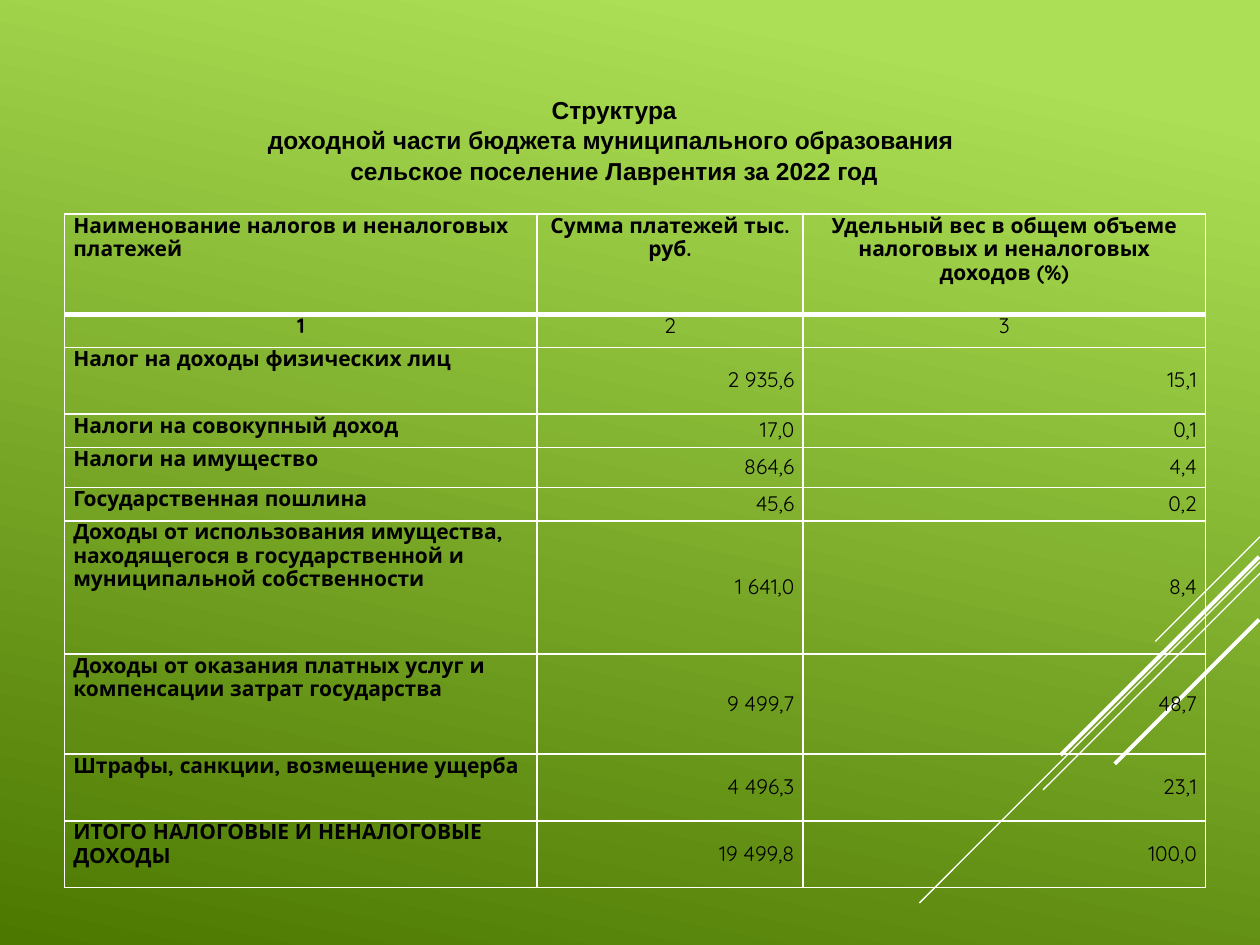
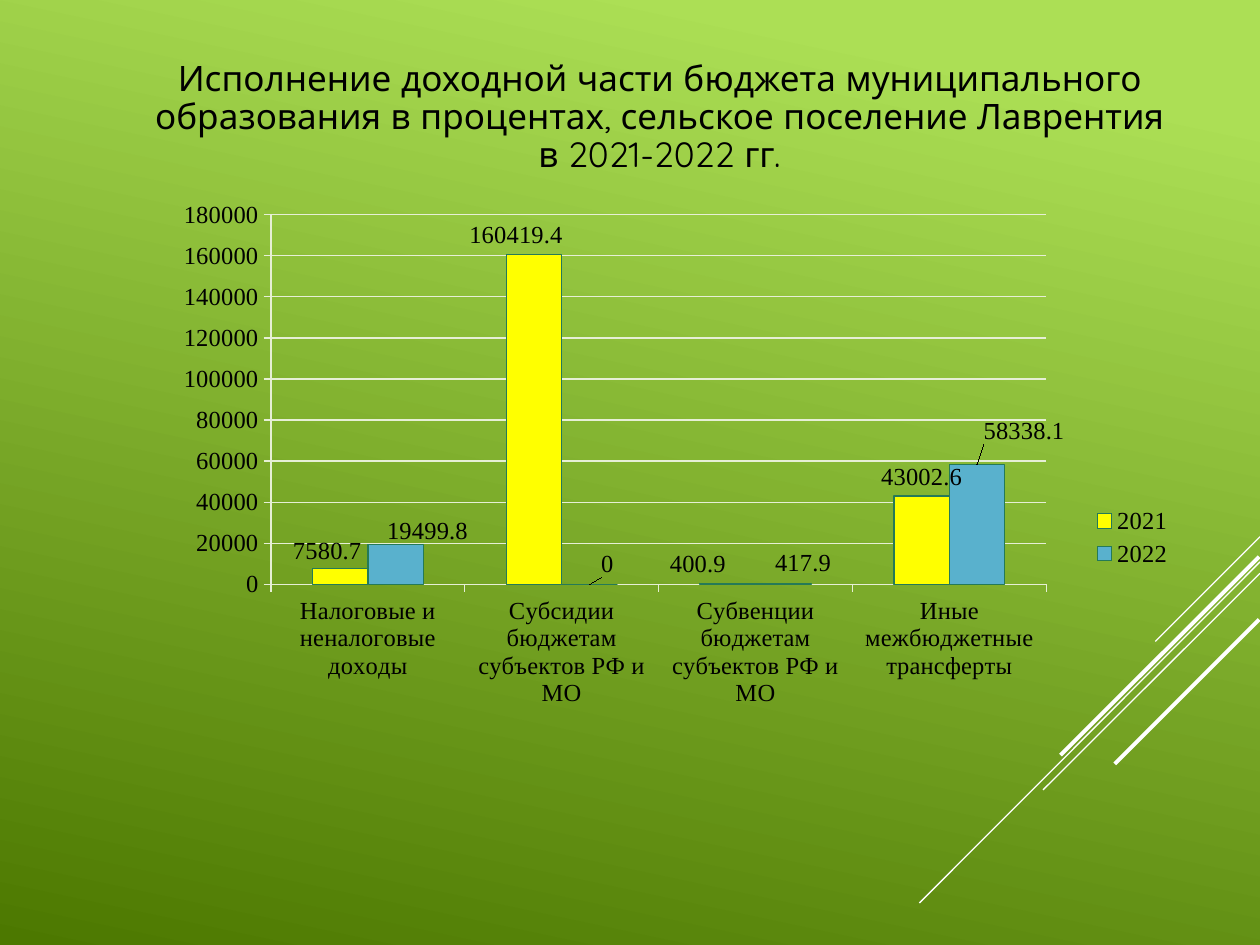
"""Builds two slides on the revenue side of a settlement budget."""
import pptx
import pptx.chart.data
import pptx.dml.color
import pptx.enum.chart
import pptx.enum.shapes
import pptx.enum.text
import pptx.oxml.ns
import pptx.util
from lxml import etree

Pt = pptx.util.Pt
qn = pptx.oxml.ns.qn
RGBColor = pptx.dml.color.RGBColor
ALIGN = pptx.enum.text.PP_ALIGN

BLACK = RGBColor(0x00, 0x00, 0x00)
WHITE = RGBColor(0xFF, 0xFF, 0xFF)
LIME = RGBColor(0xAC, 0xDF, 0x55)
MOSS = RGBColor(0x4C, 0x78, 0x00)
GRID = RGBColor(0xE6, 0xEF, 0xD5)
YELLOW = RGBColor(0xFF, 0xFF, 0x00)
BLUE = RGBColor(0x59, 0xB1, 0xCD)
BAR_EDGE = RGBColor(0x25, 0x7A, 0x57)

BODY_FONT = "Quicksand"
CHART_FONT = "Times New Roman"

STRIPES = [
    (720, 306.7, 660.2, 366.5, 0.75),
    (720, 321.1, 525.4, 516, 0.75),
    (720, 327.6, 596, 451.4, 0.75),
    (719.5, 318.2, 606, 431.5, 2.25),
    (719.5, 354, 637, 436.5, 2.25),
]

STRUCTURE_TITLE = [
    "Структура",
    "доходной части бюджета муниципального образования ",
    "сельское поселение Лаврентия за 2022 год",
]
TABLE_LEFT, TABLE_TOP = 36.9, 122.4
COLUMN_WIDTHS = [270, 152, 230]
ROW_UNIT = 19.05
HEADERS = [
    "Наименование налогов и неналоговых платежей",
    "Сумма платежей тыс. руб.",
    "Удельный вес в общем объеме налоговых и неналоговых доходов (%)",
]
COLUMN_NUMBERS = ["1", "2", "3"]
INCOME = [
    ("Налог на доходы физических лиц", "2 935,6", "15,1"),
    ("Налоги на совокупный доход", "17,0", "0,1"),
    ("Налоги на имущество", "864,6", "4,4"),
    ("Государственная пошлина", "45,6", "0,2"),
    ("Доходы от использования имущества, находящегося в государственной "
     "и муниципальной собственности", "1 641,0", "8,4"),
    ("Доходы от оказания платных услуг и компенсации затрат государства",
     "9 499,7", "48,7"),
    ("Штрафы, санкции, возмещение ущерба", "4 496,3", "23,1"),
    ("ИТОГО НАЛОГОВЫЕ И НЕНАЛОГОВЫЕ ДОХОДЫ", "19 499,8", "100,0"),
]
ROW_UNITS = [3, 1, 2, 1, 1.2, 1, 4, 3, 2, 2]

EXECUTION_TITLE = [
    "Исполнение доходной части бюджета муниципального образования "
    "в процентах, сельское поселение Лаврентия в 2021-2022 гг."
]
CATEGORIES = [
    "Налоговые и неналоговые доходы",
    "Субсидии бюджетам субъектов РФ и МО",
    "Субвенции бюджетам субъектов РФ и МО",
    "Иные межбюджетные трансферты",
]
CHART_BOX = (65.5, 105.8, 612, 402.5)
PLOT_AREA = {"layoutTarget": "inner", "xMode": "edge", "yMode": "edge",
             "x": 0.146, "y": 0.042, "w": 0.724, "h": 0.525}
SERIES = [
    {"name": "2021", "color": YELLOW,
     "values": [7580.7, 160419.4, 400.9, 43002.6],
     "label_shifts": [(-7.4, 0.6), (-10.3, -0.6), (-17.1, -0.6)]},
    {"name": "2022", "color": BLUE,
     "values": [19499.8, 0, 417.9, 58338.1],
     "label_shifts": [(18.3, 2.9), (10.3, -1.1), (11.4, -1.1), (26.9, -8.6)]},
]


def style_font(font, name, size, bold=False):
    font.name, font.size, font.bold = name, Pt(size), bold
    font.color.rgb = BLACK


def write(frame, lines, name, size, bold, align, spacing):
    frame.text = "\n".join(lines)
    for para in frame.paragraphs:
        para.alignment = align
        para.line_spacing = spacing
        for span in para.runs:
            style_font(span.font, name, size, bold)


def add_page(deck):
    page = deck.slides.add_slide(deck.slide_layouts[6])
    fill = page.background.fill
    fill.gradient()
    fill.gradient_angle = 258
    for stop, color, position in zip(fill.gradient_stops, (LIME, MOSS), (0.1, 1)):
        stop.color.rgb = color
        stop.position = position
    for x1, y1, x2, y2, width in STRIPES:
        stripe = page.shapes.add_connector(
            pptx.enum.shapes.MSO_CONNECTOR.STRAIGHT, Pt(x1), Pt(y1), Pt(x2), Pt(y2))
        stripe.line.color.rgb = WHITE
        stripe.line.width = Pt(width)
        etree.SubElement(stripe._element.spPr, qn("a:effectLst"))
    return page


def add_title(page, bounds, lines, name, size, bold, wrap, spacing):
    box = page.shapes.add_textbox(*map(Pt, bounds))
    box.text_frame.word_wrap = wrap
    write(box.text_frame, lines, name, size, bold, ALIGN.CENTER, spacing)
    return box


def add_borders(cell, widths):
    properties = cell._tc.get_or_add_tcPr()
    for side, width in widths.items():
        line = etree.SubElement(properties, qn(f"a:ln{side}"), w=str(Pt(width)))
        fill = etree.SubElement(line, qn("a:solidFill"))
        etree.SubElement(fill, qn("a:srgbClr"), val=str(WHITE))


def add_income_table(page):
    rows = [HEADERS, COLUMN_NUMBERS, *INCOME]
    table = page.shapes.add_table(
        len(rows), len(HEADERS), Pt(TABLE_LEFT), Pt(TABLE_TOP),
        Pt(sum(COLUMN_WIDTHS)), Pt(sum(ROW_UNITS) * ROW_UNIT)).table
    table.horz_banding = False
    for column, width in zip(table.columns, COLUMN_WIDTHS):
        column.width = Pt(width)
    for r, (row, units) in enumerate(zip(rows, ROW_UNITS)):
        table.rows[r].height = Pt(units * ROW_UNIT)
        for c, text in enumerate(row):
            cell = table.cell(r, c)
            cell.margin_left = cell.margin_right = Pt(5)
            cell.margin_top = cell.margin_bottom = 0
            if r == 1 or (r == 0 and c):
                align = ALIGN.CENTER
            else:
                align = ALIGN.RIGHT if c else ALIGN.LEFT
            if r > 1 and c:
                cell.vertical_anchor = pptx.enum.text.MSO_ANCHOR.MIDDLE
            write(cell.text_frame, [text], BODY_FONT, 12, r == 0 or c == 0, align, 0.9)
            add_borders(cell, {"L": 1, "R": 1, "T": 3 if r == 1 else 1,
                               "B": 3 if r == 0 else 1})
            cell.fill.background()


def make_layout(settings):
    layout = etree.Element(qn("c:layout"))
    manual = etree.SubElement(layout, qn("c:manualLayout"))
    for key, value in settings.items():
        etree.SubElement(manual, qn(f"c:{key}"), val=str(value))
    return layout


def style_series(series, content):
    series.format.fill.solid()
    series.format.fill.fore_color.rgb = content["color"]
    series.format.line.color.rgb = BAR_EDGE
    series.format.line.width = Pt(0.75)
    series.invert_if_negative = False
    outside = pptx.enum.chart.XL_LABEL_POSITION.OUTSIDE_END
    labels = series.data_labels
    labels.show_value = True
    labels.position = outside
    style_font(labels.font, CHART_FONT, 14)
    for index, _ in enumerate(content["label_shifts"]):
        label = series.points[index].data_label
        style_font(label.font, CHART_FONT, 14)
        label.position = outside
    shifted = series._element.xpath("c:dLbls/c:dLbl")
    for label, (dx, dy) in zip(shifted, content["label_shifts"]):
        shift = {"x": round(dx / CHART_BOX[2], 4), "y": round(dy / CHART_BOX[3], 4)}
        label.insert(1, make_layout(shift))


def add_execution_chart(page):
    data = pptx.chart.data.CategoryChartData()
    data.categories = CATEGORIES
    for content in SERIES:
        data.add_series(content["name"], content["values"])
    chart = page.shapes.add_chart(
        pptx.enum.chart.XL_CHART_TYPE.COLUMN_CLUSTERED, *map(Pt, CHART_BOX), data).chart
    style_font(chart.font, CHART_FONT, 14)
    chart.has_title = False
    chart.has_legend = True
    chart.legend.position = pptx.enum.chart.XL_LEGEND_POSITION.RIGHT
    chart.legend.include_in_layout = False
    amounts = chart.value_axis
    amounts.minimum_scale, amounts.maximum_scale = 0, 180000
    amounts.major_unit = 20000
    amounts.has_major_gridlines = True
    for line in (amounts.format.line, amounts.major_gridlines.format.line,
                 chart.category_axis.format.line):
        line.color.rgb = GRID
        line.width = Pt(0.75)
    for axis in (amounts, chart.category_axis):
        axis.major_tick_mark = pptx.enum.chart.XL_TICK_MARK.OUTSIDE
    plot = chart.plots[0]
    plot.gap_width, plot.overlap = 150, 0
    plot.vary_by_categories = False
    for series, content in zip(plot.series, SERIES):
        style_series(series, content)
    plot_area = chart._chartSpace.chart.plotArea
    for layout in plot_area.findall(qn("c:layout")):
        plot_area.remove(layout)
    plot_area.insert(0, make_layout(PLOT_AREA))


def main():
    deck = pptx.Presentation()
    deck.slide_width, deck.slide_height = Pt(720), Pt(540)

    structure = add_page(deck)
    add_title(structure, (144.7, 49.7, 412.6, 58.3), STRUCTURE_TITLE,
              "Arial", 14, True, False, 1.05)
    add_income_table(structure)

    execution = add_page(deck)
    add_execution_chart(execution)
    add_title(execution, (76.3, 31.7, 601.2, 79.9), EXECUTION_TITLE,
              BODY_FONT, 20, False, True, 0.9)

    deck.save("out.pptx")


if __name__ == "__main__":
    main()
